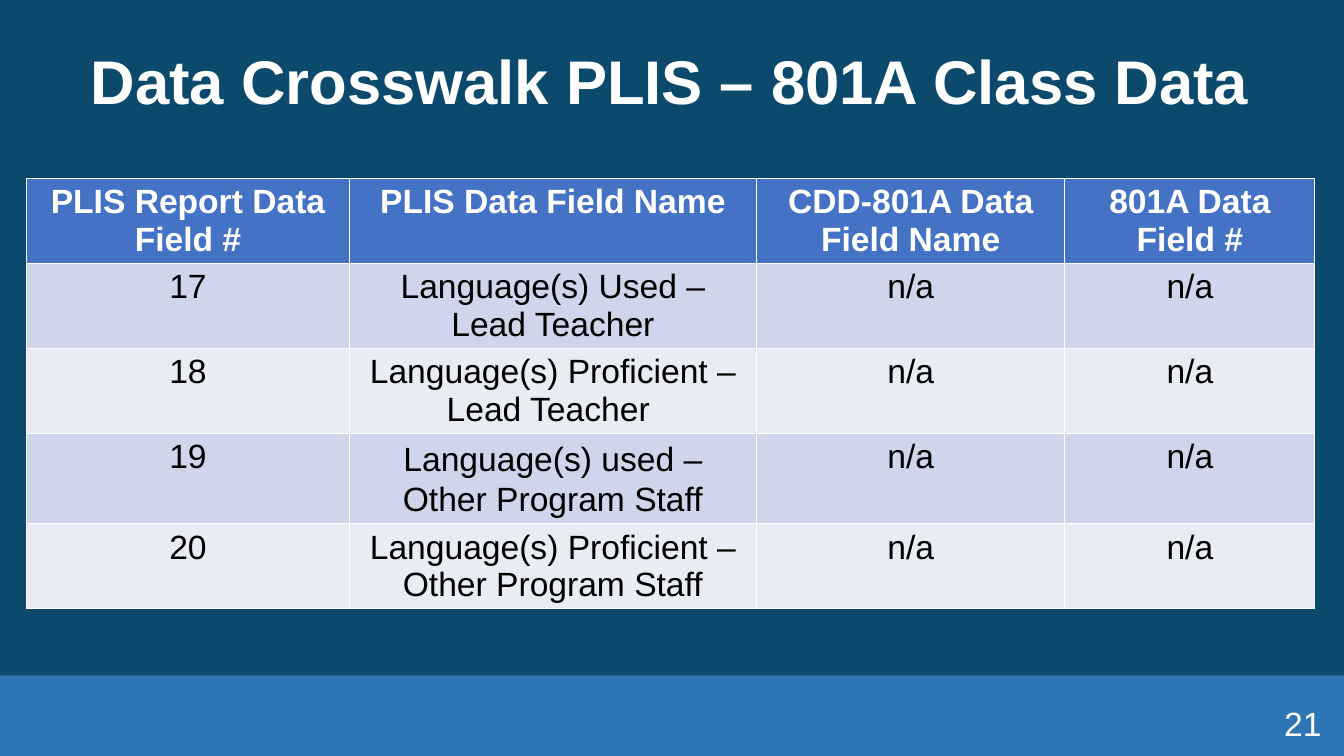
from dataclasses import dataclass

from pptx import Presentation
from pptx.dml.color import RGBColor as RGB
from pptx.enum.shapes import MSO_SHAPE as Shape
from pptx.enum.text import MSO_ANCHOR as Anchor, PP_ALIGN as Align
from pptx.util import Pt


@dataclass(frozen=True)
class Theme:
    font: str = "Arial"
    title_size: int = 44
    text_size: int = 24
    background: str = "0C4A6D"
    band: str = "2E75B6"
    header: str = "4472C4"
    odd_row: str = "CFD5EA"
    even_row: str = "E9EBF5"
    light: str = "FFFFFF"
    dark: str = "000000"


THEME = Theme()
WIDTH, HEIGHT = 960, 540
COL_WIDTHS = [230.4, 290.88, 220.32, 178.56]
ROW_HEIGHT = 60
ROWS = [
    ["PLIS Report Data Field #", "PLIS Data Field Name",
     "CDD-801A Data Field Name", "801A Data Field #"],
    ["17", "Language(s) Used – Lead Teacher", "n/a", "n/a"],
    ["18", "Language(s) Proficient – Lead Teacher ", "n/a", "n/a"],
    ["19", "Language(s) used – Other Program Staff", "n/a", "n/a"],
    ["20", "Language(s) Proficient – Other Program Staff", "n/a", "n/a"],
]
LOOSE_CELL = (3, 1)


def set_attrs(obj, values):
    for name, value in values.items():
        setattr(obj, name, value)


def paint(fill, color):
    fill.solid()
    fill.fore_color.rgb = RGB.from_string(color)


def write(tf, text, size, color, bold=False, **para):
    p = tf.paragraphs[0]
    set_attrs(p, para)
    r = p.add_run()
    r.text = text
    set_attrs(r.font, {"name": THEME.font, "size": Pt(size), "bold": bold})
    r.font.color.rgb = RGB.from_string(color)


def add_band(s):
    sp = s.shapes.add_shape(Shape.RECTANGLE, 0, Pt(482.4), Pt(WIDTH), Pt(57.6))
    sp.shadow.inherit = False
    paint(sp.fill, THEME.band)
    sp.line.fill.background()
    s.shapes._spTree.insert(2, sp._element)


def add_title(s, text):
    sp = s.shapes.title
    set_attrs(sp, {"left": Pt(10.8), "top": Pt(7.92),
                   "width": Pt(936), "height": Pt(104.4)})
    set_attrs(sp.text_frame, {"word_wrap": True, "vertical_anchor": Anchor.MIDDLE})
    write(sp.text_frame, text, THEME.title_size, THEME.light, True,
          alignment=Align.CENTER, line_spacing=0.9)


def add_crosswalk(s):
    table = s.shapes.add_table(
        len(ROWS), len(COL_WIDTHS), Pt(19.08), Pt(127.44),
        Pt(sum(COL_WIDTHS)), Pt(ROW_HEIGHT * len(ROWS))).table
    for col, width in zip(table.columns, COL_WIDTHS):
        col.width = Pt(width)
    for i, row in enumerate(ROWS):
        is_header = i == 0
        band = THEME.odd_row if i % 2 else THEME.even_row
        for j, text in enumerate(row):
            cell = table.cell(i, j)
            paint(cell.fill, THEME.header if is_header else band)
            spacing = {"line_spacing": 1.07, "space_after": Pt(8)} if (i, j) == LOOSE_CELL else {}
            write(cell.text_frame, text, THEME.text_size,
                  THEME.light if is_header else THEME.dark, is_header,
                  alignment=Align.CENTER, **spacing)


def add_page_number(s, number):
    tf = s.shapes.add_textbox(Pt(872.64), Pt(499.68), Pt(71.28), Pt(30.96)).text_frame
    set_attrs(tf, {"word_wrap": True, "vertical_anchor": Anchor.BOTTOM,
                   "margin_left": 0, "margin_top": 0,
                   "margin_right": 0, "margin_bottom": 0})
    write(tf, number, THEME.text_size, THEME.light, alignment=Align.RIGHT)


def main():
    prs = Presentation()
    set_attrs(prs, {"slide_width": Pt(WIDTH), "slide_height": Pt(HEIGHT)})
    s = prs.slides.add_slide(prs.slide_layouts[5])
    paint(s.background.fill, THEME.background)
    add_band(s)
    add_title(s, "Data Crosswalk PLIS – 801A Class Data")
    add_crosswalk(s)
    add_page_number(s, "21")
    prs.save("out.pptx")


if __name__ == "__main__":
    main()
